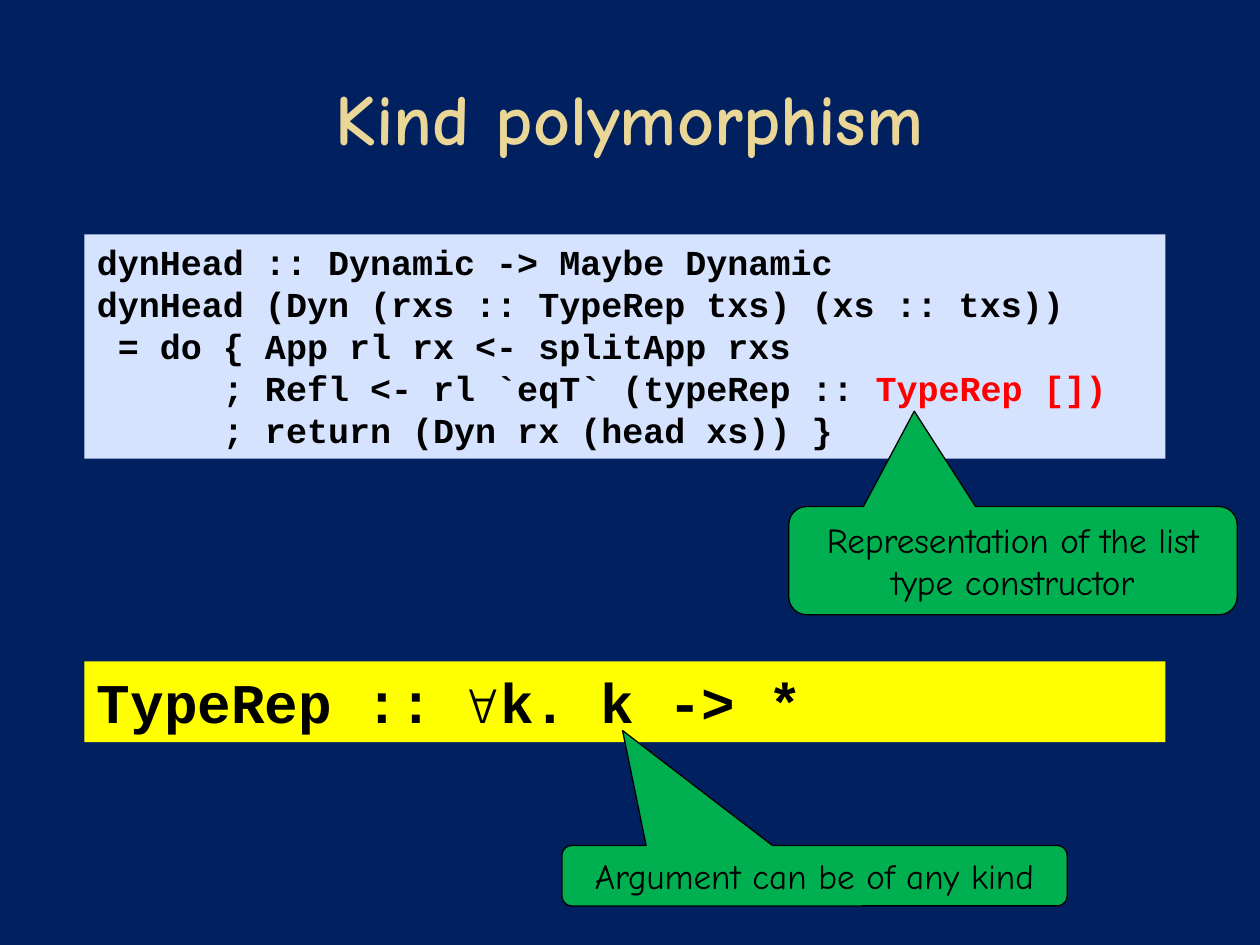
from dataclasses import dataclass

from pptx import Presentation
from pptx.dml.color import RGBColor
from pptx.enum.shapes import MSO_SHAPE as Shape
from pptx.enum.text import MSO_ANCHOR as Anchor, MSO_AUTO_SIZE as AutoSize, PP_ALIGN as Align
from pptx.util import Inches, Pt


@dataclass(frozen=True)
class Theme:
    background: str = "002060"
    heading: str = "EAD696"
    code_fill: str = "D6E3FF"
    signature_fill: str = "FFFF00"
    callout_fill: str = "00B050"
    ink: str = "000000"
    accent: str = "FF0000"
    prose_font: str = "Comic Neue"
    code_font: str = "Courier New"
    heading_size: int = 41
    signature_size: int = 32
    body_size: int = 20


@dataclass(frozen=True)
class Span:
    text: str
    color: str


@dataclass(frozen=True)
class CodePanel:
    top: float
    height: float
    fill: str
    size: int
    lines: tuple[tuple[Span, ...], ...]


@dataclass(frozen=True)
class Callout:
    left: float
    top: float
    width: float
    height: float
    pointer: tuple[float, float]
    text: str


THEME = Theme()
PANEL_LEFT, PANEL_WIDTH = 0.67, 8.58


def code(text: str) -> Span:
    return Span(text, THEME.ink)


PANELS = (
    CodePanel(1.86, 1.78, THEME.code_fill, THEME.body_size, (
        (code("dynHead :: Dynamic -> Maybe Dynamic"),),
        (code("dynHead (Dyn (rxs :: TypeRep txs) (xs :: txs))"),),
        (code(" = do { App rl rx <- splitApp rxs"),),
        (code("      ; Refl <- rl `eqT` (typeRep :: "), Span("TypeRep [])", THEME.accent)),
        (code("      ; return (Dyn rx (head xs)) }"),),
    )),
    CodePanel(5.25, 0.64, THEME.signature_fill, THEME.signature_size, (
        (code("TypeRep :: ∀k. k -> *"),),
    )),
)

CALLOUTS = (
    Callout(6.26, 4.02, 3.56, 0.86, (-0.22, -1.38),
            "Representation of the list type constructor"),
    Callout(4.46, 6.71, 4.01, 0.48, (-0.38, -2.4), "Argument can be of any kind"),
)


def add_run(paragraph, text: str, *, font: str, size: int, color: str, bold: bool = False) -> None:
    run = paragraph.add_run()
    run.text = text
    run.font.name = font
    run.font.size = Pt(size)
    run.font.bold = bold
    run.font.color.rgb = RGBColor.from_string(color)


def add_filled(slide, kind: Shape, box: tuple[float, ...], fill: str, anchor: Anchor):
    filled = slide.shapes.add_shape(kind, *map(Inches, box))
    filled.shadow.inherit = False
    filled.fill.solid()
    filled.fill.fore_color.rgb = RGBColor.from_string(fill)
    filled.text_frame.word_wrap = True
    filled.text_frame.auto_size = AutoSize.SHAPE_TO_FIT_TEXT
    filled.text_frame.vertical_anchor = anchor
    return filled


def add_heading(slide, text: str) -> None:
    heading = slide.shapes.title
    heading.left, heading.top, heading.width, heading.height = map(Inches, (0.5, 0.3, 9, 1.25))
    heading.text_frame.vertical_anchor = Anchor.MIDDLE
    paragraph = heading.text_frame.paragraphs[0]
    paragraph.alignment = Align.CENTER
    add_run(paragraph, text, font=THEME.prose_font, size=THEME.heading_size,
            color=THEME.heading, bold=True)


def add_code_panel(slide, panel: CodePanel) -> None:
    box = (PANEL_LEFT, panel.top, PANEL_WIDTH, panel.height)
    block = add_filled(slide, Shape.RECTANGLE, box, panel.fill, Anchor.TOP)
    block.line.fill.background()
    frame = block.text_frame
    for index, line in enumerate(panel.lines):
        paragraph = frame.add_paragraph() if index else frame.paragraphs[0]
        paragraph.alignment = Align.LEFT
        for span in line:
            add_run(paragraph, span.text, font=THEME.code_font, size=panel.size,
                    color=span.color, bold=True)


def add_callout(slide, callout: Callout) -> None:
    box = (callout.left, callout.top, callout.width, callout.height)
    bubble = add_filled(slide, Shape.ROUNDED_RECTANGULAR_CALLOUT, box,
                        THEME.callout_fill, Anchor.MIDDLE)
    bubble.adjustments[0], bubble.adjustments[1] = callout.pointer
    bubble.line.color.rgb = RGBColor.from_string(THEME.ink)
    bubble.line.width = Pt(0.75)
    paragraph = bubble.text_frame.paragraphs[0]
    paragraph.alignment = Align.CENTER
    add_run(paragraph, callout.text, font=THEME.prose_font, size=THEME.body_size,
            color=THEME.ink)


def main() -> None:
    deck = Presentation()
    deck.slide_width, deck.slide_height = Inches(10), Inches(7.5)
    slide = deck.slides.add_slide(deck.slide_layouts.get_by_name("Title Only"))
    slide.background.fill.solid()
    slide.background.fill.fore_color.rgb = RGBColor.from_string(THEME.background)
    add_heading(slide, "Kind polymorphism")
    for panel, callout in zip(PANELS, CALLOUTS):
        add_code_panel(slide, panel)
        add_callout(slide, callout)
    deck.save("out.pptx")


if __name__ == "__main__":
    main()
